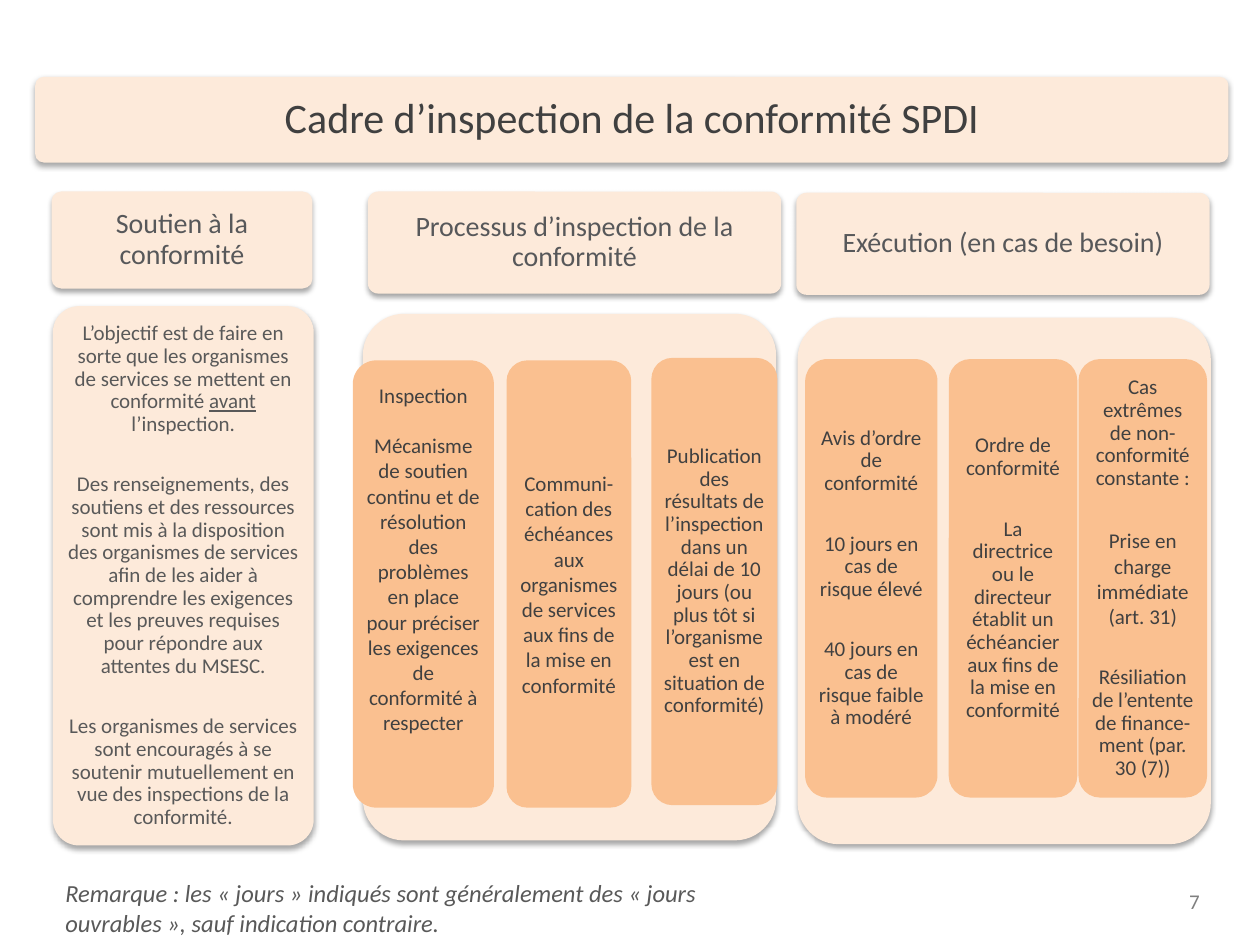
import pptx
import pptx.util
import pptx.dml.color
import pptx.enum.shapes
import pptx.enum.text
import pptx.oxml
import pptx.oxml.ns

Inches, Pt = pptx.util.Inches, pptx.util.Pt
ALIGN = pptx.enum.text.PP_ALIGN
ANCHOR = pptx.enum.text.MSO_ANCHOR
COLORS = {"panel": "FDEADA", "step": "FAC090", "dark": "404040",
          "header": "57585A", "body": "595959", "number": "808080"}
SHADOW = (
    f'<a:effectLst {pptx.oxml.ns.nsdecls("a")}>'
    '<a:outerShdw blurRad="40000" dist="23000" dir="5400000" rotWithShape="0">'
    '<a:srgbClr val="000000"><a:alpha val="35000"/></a:srgbClr>'
    '</a:outerShdw></a:effectLst>')


def rgb(name):
    return pptx.dml.color.RGBColor.from_string(COLORS[name])


def write(p, text, size=12, color="dark", align=ALIGN.CENTER, spacing=0.9,
          before=0, italic=False):
    """Fill a paragraph; _words_ are underlined and a newline is a line break."""
    p.alignment, p.line_spacing, p.space_before = align, spacing, Pt(before)
    for i, line in enumerate(text.split("\n")):
        if i:
            p.add_line_break()
        for j, part in enumerate(line.split("_")):
            r = p.add_run()
            r.text = part
            r.font.name, r.font.size, r.font.italic = "Calibri", Pt(size), italic
            r.font.color.rgb = rgb(color)
            if j % 2:
                r.font.underline = True


class FrameworkSlide:
    def __init__(self, prs):
        self.s = prs.slides.add_slide(prs.slide_layouts[6])

    def card(self, box, texts=(), fill="panel", radius=0.1, inset=0.05,
             bottom=None, gap=0, **fmt):
        """Rounded box with centred paragraphs, each separated by gap points."""
        sp = self.s.shapes.add_shape(
            pptx.enum.shapes.MSO_SHAPE.ROUNDED_RECTANGLE, *map(Inches, box))
        sp.adjustments[0] = radius
        sp.fill.solid()
        sp.fill.fore_color.rgb = rgb(fill)
        sp.line.fill.background()
        sp.shadow.inherit = False
        tf = sp.text_frame
        tf.word_wrap, tf.vertical_anchor = True, ANCHOR.MIDDLE
        tf.margin_left = tf.margin_right = tf.margin_top = Inches(inset)
        tf.margin_bottom = Inches(bottom or inset)
        for i, text in enumerate(texts):
            p = tf.add_paragraph() if i else tf.paragraphs[0]
            write(p, text, before=gap if i else 0, **fmt)
        return sp

    def panel(self, box, texts=(), **fmt):
        """Pale card with a soft shadow."""
        sp = self.card(box, texts, **fmt)
        pr = sp._element.spPr
        pr.replace(pr.find(pptx.oxml.ns.qn("a:effectLst")),
                   pptx.oxml.parse_xml(SHADOW))

    def header(self, box, text):
        self.panel(box, [text], inset=0.07, size=16, color="header")

    def step(self, box, texts, **fmt):
        return self.card(box, texts, fill="step", radius=0.1667, **fmt)

    def label(self, box, text, anchor=ANCHOR.TOP, **fmt):
        tf = self.s.shapes.add_textbox(*map(Inches, box)).text_frame
        tf.word_wrap, tf.vertical_anchor = True, anchor
        write(tf.paragraphs[0], text, spacing=1.0, **fmt)


def main():
    prs = pptx.Presentation()
    prs.slide_width, prs.slide_height = Inches(10), Inches(7.5)
    slide = FrameworkSlide(prs)

    slide.panel((0.28, 0.61, 9.47, 0.68),
                ["Cadre d’inspection de la conformité SPDI"], inset=0.1, size=24)

    slide.header((0.41, 1.52, 2.07, 0.77), "Soutien à la conformité")
    slide.panel((0.42, 2.43, 2.07, 4.28), [
        "L’objectif est de faire en sorte que les organismes de services se "
        "mettent en conformité _avant_ l’inspection.",
        "Des renseignements, des soutiens et des ressources sont mis à la "
        "disposition des organismes de services afin de les aider à comprendre "
        "les exigences et les preuves requises pour répondre aux attentes du "
        "MSESC.",
        "Les organismes de services sont encouragés à se soutenir mutuellement "
        "en vue des inspections de la conformité.",
    ], color="body", gap=21.6)

    slide.header((2.92, 1.52, 3.28, 0.81), "Processus d’inspection de la conformité")
    slide.panel((2.88, 2.49, 3.28, 4.18))
    slide.header((6.32, 1.53, 3.28, 0.81), "Exécution (en cas de besoin)")
    slide.panel((6.33, 2.52, 3.28, 4.18))

    slide.step((2.8, 2.86, 1.12, 3.55), [
        "Inspection",
        "Mécanisme de soutien continu et de résolution des problèmes en place "
        "pour préciser les exigences de conformité à respecter",
    ], spacing=1.0, gap=14.4, bottom=0.45)
    slide.step((4.02, 2.86, 0.99, 3.55), [
        "Communi-cation des échéances aux organismes de services aux fins de "
        "la mise en conformité"], spacing=1.0)
    slide.step((5.17, 2.84, 1, 3.55), [
        "Publication des résultats de l’inspection dans un délai de 10 jours "
        "(ou plus tôt si l’organisme est en situation de conformité)"])

    top, height = 2.85, 3.48
    slide.step((6.39, top, 1.05, height), [
        "Avis d’ordre de conformité",
        "10 jours en cas de risque élevé",
        "40 jours en cas de risque faible à modéré"], gap=21.6)
    slide.step((7.53, top, 1.02, height), [
        "Ordre de conformité",
        "La directrice ou le directeur établit un échéancier aux fins de la "
        "mise en conformité"], gap=21.6)
    extreme = slide.step((8.56, top, 1.02, height), [
        "Cas extrêmes de non-conformité constante :",
        "Prise en charge immédiate\n(art. 31)",
        "Résiliation de l’entente de finance-ment (par. 30 (7))"], gap=21.6)
    extreme.text_frame.paragraphs[1].line_spacing = 1.0

    slide.label((7.17, 6.95, 2.45, 0.4), "7", anchor=ANCHOR.MIDDLE,
                color="number", align=ALIGN.RIGHT)
    slide.label((0.42, 6.92, 6.0, 0.34),
                "Remarque : les « jours » indiqués sont généralement des "
                "« jours ouvrables », sauf indication contraire.",
                size=14, color="body", align=ALIGN.LEFT, italic=True)
    prs.save("out.pptx")


if __name__ == "__main__":
    main()
